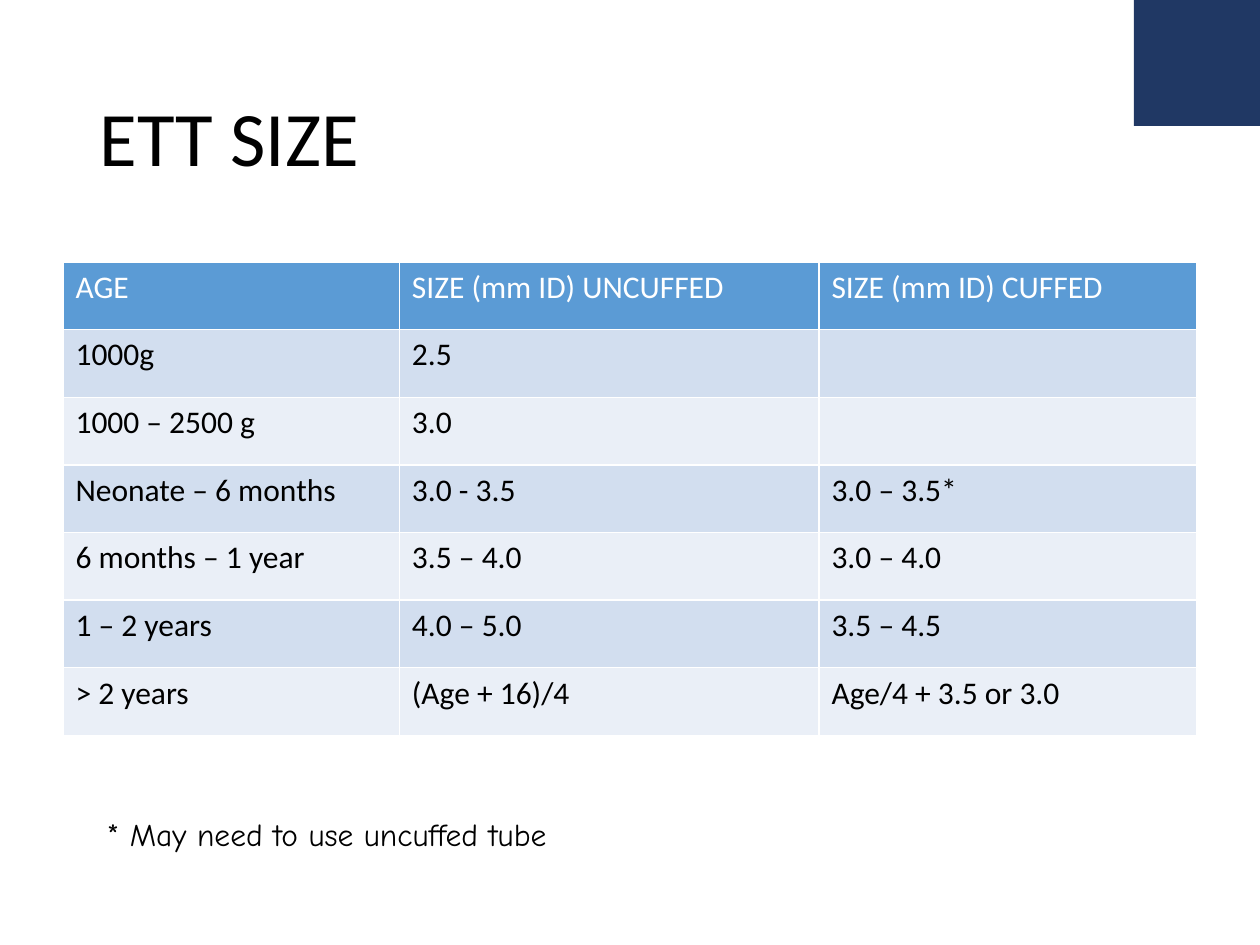
from pptx import Presentation
from pptx.dml.color import RGBColor
from pptx.enum.text import MSO_ANCHOR, MSO_AUTO_SIZE, PP_ALIGN
from pptx.util import Inches, Pt

NAVY = RGBColor(0x20, 0x38, 0x64)
BLUE = RGBColor(0x5B, 0x9B, 0xD5)
BAND_DARK = RGBColor(0xD2, 0xDE, 0xEF)
BAND_LIGHT = RGBColor(0xEA, 0xEF, 0xF7)
WHITE = RGBColor(0xFF, 0xFF, 0xFF)
BLACK = RGBColor(0, 0, 0)

COLUMN_WIDTHS = [2.67, 3.33, 3]
ROW_HEIGHT = 0.537
TUBE_SIZES = [
    ["AGE", "SIZE (mm ID) UNCUFFED", "SIZE (mm ID) CUFFED"],
    ["1000g", "2.5", ""],
    ["1000 – 2500 g", "3.0", ""],
    ["Neonate – 6 months", "3.0 - 3.5", "3.0 – 3.5*"],
    ["6 months – 1 year", "3.5 – 4.0", "3.0 – 4.0"],
    ["1 – 2 years", "4.0 – 5.0", "3.5 – 4.5"],
    ["> 2 years", "(Age + 16)/4", "Age/4 + 3.5 or 3.0"],
]


def add_run(paragraph, text, size, font_name, color):
    run = paragraph.add_run()
    run.text = text
    run.font.size = Pt(size)
    run.font.name = font_name
    run.font.bold = False
    run.font.color.rgb = color


def curve_points(start, control_1, control_2, end, steps=60):
    points = []
    for step in range(1, steps + 1):
        t = step / steps
        weights = ((1 - t) ** 3, 3 * t * (1 - t) ** 2, 3 * t ** 2 * (1 - t), t ** 3)
        corners = (start, control_1, control_2, end)
        points.append(tuple(sum(w * c[axis] for w, c in zip(weights, corners))
                            for axis in (0, 1)))
    return points


def add_swoosh(slide):
    top_right, tip, left_edge = (10, 0), (9.99, 1.29), (0.03, 0.1)
    outline = [top_right]
    outline += curve_points(top_right, (10, 0.14), (9.99, 1.15), tip)
    outline += curve_points(tip, (9.98, 0), (3.36, 0.1), left_edge)
    builder = slide.shapes.build_freeform(0, 0, scale=Inches(1))
    builder.add_line_segments(outline, close=True)
    swoosh = builder.convert_to_shape()
    swoosh.shadow.inherit = False
    swoosh.fill.solid()
    swoosh.fill.fore_color.rgb = NAVY
    swoosh.line.fill.background()
    slide.shapes.title.element.addprevious(swoosh.element)


def add_title(slide, text):
    title = slide.shapes.title
    title.left, title.top = Inches(0.69), Inches(0.4)
    title.width, title.height = Inches(8.62), Inches(1.45)
    title.text_frame.vertical_anchor = MSO_ANCHOR.MIDDLE
    heading = title.text_frame.paragraphs[0]
    heading.alignment = PP_ALIGN.LEFT
    heading.line_spacing = 0.9
    add_run(heading, text, 44, "Calibri", BLACK)


def add_size_table(slide):
    table = slide.shapes.add_table(
        len(TUBE_SIZES), len(COLUMN_WIDTHS), Inches(0.5), Inches(2.08),
        Inches(sum(COLUMN_WIDTHS)), Inches(ROW_HEIGHT * len(TUBE_SIZES))).table
    for column, width in zip(table.columns, COLUMN_WIDTHS):
        column.width = Inches(width)
    for row_index, values in enumerate(TUBE_SIZES):
        if row_index == 0:
            fill, color = BLUE, WHITE
        else:
            fill, color = (BAND_DARK if row_index % 2 else BAND_LIGHT), BLACK
        for column_index, value in enumerate(values):
            cell = table.cell(row_index, column_index)
            cell.fill.solid()
            cell.fill.fore_color.rgb = fill
            if value:
                add_run(cell.text_frame.paragraphs[0], value, 18, "Calibri", color)


def add_footnote(slide, text):
    footnote = slide.shapes.add_textbox(
        Inches(0.75), Inches(6.42), Inches(4.08), Inches(0.4)).text_frame
    footnote.word_wrap = False
    footnote.auto_size = MSO_AUTO_SIZE.SHAPE_TO_FIT_TEXT
    add_run(footnote.paragraphs[0], text, 18, "Comic Neue", BLACK)


def main():
    deck = Presentation()
    deck.slide_width, deck.slide_height = Inches(10), Inches(7.5)
    slide = deck.slides.add_slide(deck.slide_layouts[5])
    add_swoosh(slide)
    add_title(slide, "ETT SIZE")
    add_size_table(slide)
    add_footnote(slide, "* May need to use uncuffed tube")
    deck.save("out.pptx")


if __name__ == "__main__":
    main()
